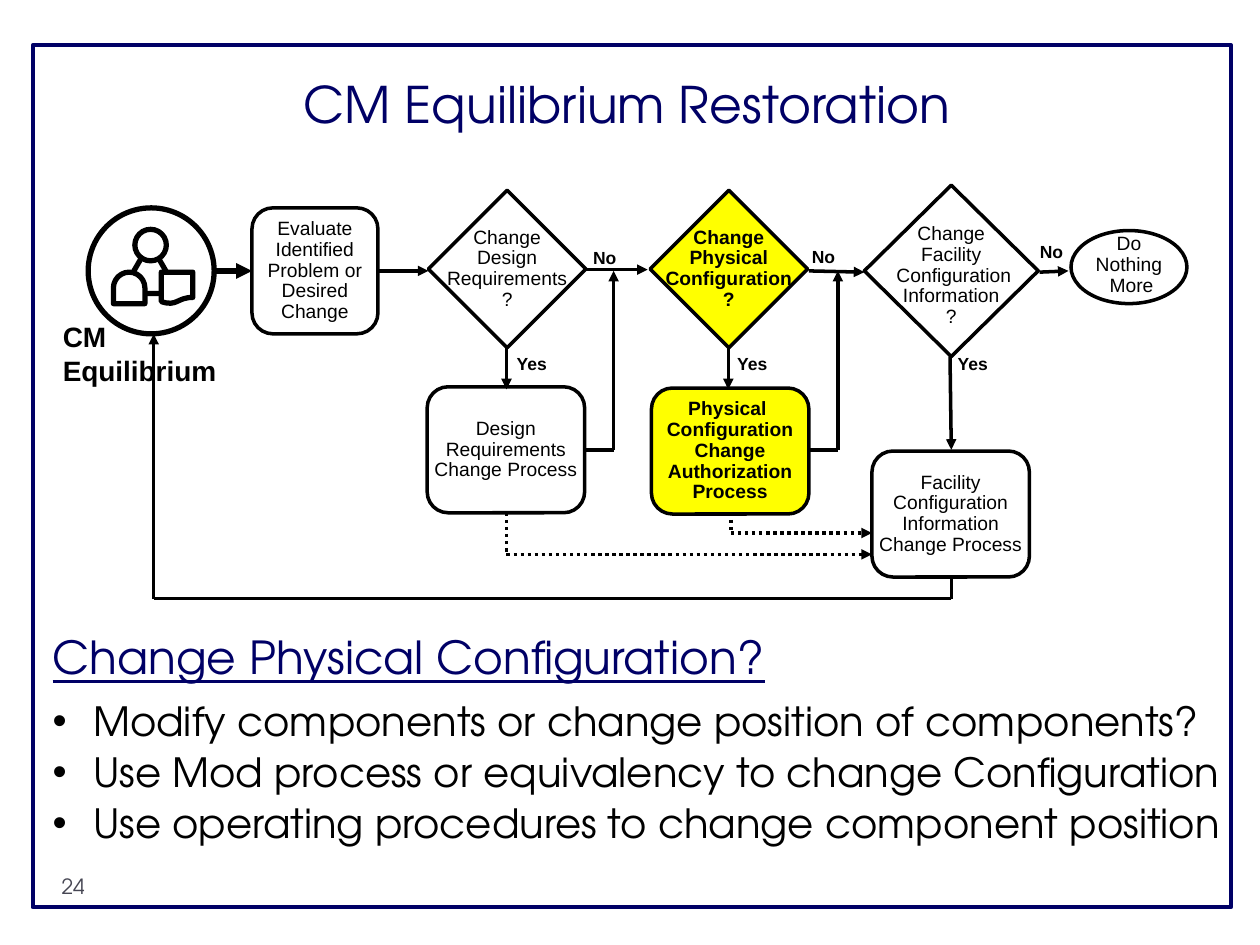
from copy import deepcopy
from dataclasses import dataclass

from lxml.etree import SubElement
from pptx import Presentation
from pptx.dml.color import RGBColor
from pptx.enum.dml import MSO_LINE
from pptx.enum.shapes import MSO_CONNECTOR, MSO_SHAPE
from pptx.enum.text import MSO_ANCHOR, PP_ALIGN
from pptx.oxml.ns import qn
from pptx.util import Inches, Pt


@dataclass(frozen=True)
class Theme:
    head: str = "TeX Gyre Adventor"
    body: str = "Arial"
    navy: str = "000066"
    black: str = "000000"
    white: str = "FFFFFF"
    yellow: str = "FFFF00"
    grey: str = "464653"
    title: float = 28.8
    topic: float = 26
    point: float = 23
    state: float = 16
    node: float = 11
    mark: float = 10
    page: float = 12
    thin: float = 2
    frame: float = 2.5
    thick: float = 3


T = Theme()


def assign(item, values):
    for name, value in values.items():
        setattr(item, name, value)


def style(para, size, face=T.body, color=T.black, **font):
    """Format each run of a paragraph, and its line breaks alike."""
    for run in para.runs:
        assign(run.font, dict(size=Pt(size), name=face, **font))
        run.font.color.rgb = RGBColor.from_string(color)
    for gap in para._p.findall(qn("a:br")):
        gap.append(deepcopy(para.runs[0]._r.rPr))


def stroke(line, color, width):
    line.color.rgb = RGBColor.from_string(color)
    line.width = Pt(width)


def write(slide, box, text, size, align=PP_ALIGN.LEFT, anchor=MSO_ANCHOR.TOP, **font):
    frame = slide.shapes.add_textbox(*map(Inches, box)).text_frame
    assign(frame, dict(word_wrap=True, vertical_anchor=anchor, text=text))
    for para in frame.paragraphs:
        para.alignment = align
        style(para, size, **font)
    return frame


def draw(slide, kind, box, fill=None, width=T.thin, color=T.black, turn=0):
    shape = slide.shapes.add_shape(kind, *map(Inches, box))
    shape.shadow.inherit = False
    shape.rotation = turn
    stroke(shape.line, color, width)
    if fill:
        shape.fill.solid()
        shape.fill.fore_color.rgb = RGBColor.from_string(fill)
    else:
        shape.fill.background()
    return shape


def node(slide, kind, box, text, fill=T.white, bold=False, inset=(0.1, 0.05, 0.1, 0.05)):
    frame = draw(slide, kind, box, fill).text_frame
    sides = ("margin_left", "margin_top", "margin_right", "margin_bottom")
    assign(frame, dict(zip(sides, map(Inches, inset))))
    assign(frame, dict(word_wrap=False, vertical_anchor=MSO_ANCHOR.MIDDLE, text=text))
    for para in frame.paragraphs:
        assign(para, dict(alignment=PP_ALIGN.CENTER, line_spacing=0.9))
        style(para, T.node, bold=bold)


def route(slide, *stops, width=T.thin, dash=None):
    """Join the stops by straight lines, with an arrowhead at the last one."""
    for start, end in zip(stops, stops[1:]):
        ends = map(Inches, (*start, *end))
        wire = slide.shapes.add_connector(MSO_CONNECTOR.STRAIGHT, *ends)
        stroke(wire.line, T.black, width)
        if dash:
            wire.line.dash_style = dash
        if end == stops[-1]:
            SubElement(wire.line._get_or_add_ln(), qn("a:tailEnd"), type="triangle")
        SubElement(wire._element.spPr, qn("a:effectLst"))


def person(slide):
    """Draw the round sign of the equilibrium state."""
    parts = [
        (MSO_SHAPE.OVAL, (0.7, 1.65, 1, 1), T.white, 0),
        (MSO_SHAPE.ISOSCELES_TRIANGLE, (0.96, 1.93, 0.46, 0.4), None, 0),
        (MSO_SHAPE.OVAL, (1.07, 1.82, 0.25, 0.25), T.white, 0),
        (MSO_SHAPE.FLOWCHART_DOCUMENT, (1.28, 2.16, 0.25, 0.25), T.white, 0),
        (MSO_SHAPE.FLOWCHART_DELAY, (0.9, 2.16, 0.25, 0.25), T.white, 270),
    ]
    for kind, box, fill, turn in parts:
        draw(slide, kind, box, fill, T.thick, turn=turn)
    write(slide, (0.4, 2.49, 1.45, 0.64), "CM Equilibrium", T.state, bold=True)


def nodes(slide):
    card, gate, oval = MSO_SHAPE.ROUNDED_RECTANGLE, MSO_SHAPE.DIAMOND, MSO_SHAPE.OVAL
    hot = dict(fill=T.yellow, bold=True)
    node(slide, card, (2, 1.65, 1, 1),
         "Evaluate\vIdentified\vProblem or\vDesired\vChange")
    node(slide, gate, (3.4, 1.51, 1.25, 1.25), "Change\vDesign\nRequirements\v?")
    node(slide, gate, (5.16, 1.51, 1.25, 1.25),
         "Change\vPhysical\vConfiguration\v?", **hot)
    node(slide, gate, (6.86, 1.47, 1.38, 1.36),
         "Change\vFacility\n Configuration\vInformation\v?", None, inset=(0, 0.08, 0, 0))
    node(slide, oval, (8.5, 1.83, 0.92, 0.58), "Do\vNothing\v More", None,
         inset=(0.1, 0.02, 0.1, 0.05))
    node(slide, card, (3.39, 3.07, 1.25, 1), "Design\nRequirements\vChange Process")
    node(slide, card, (5.17, 3.08, 1.25, 1),
         "Physical \vConfiguration\vChange\vAuthorization\vProcess", **hot)
    node(slide, card, (6.92, 3.58, 1.25, 1),
         "Facility\nConfiguration\vInformation\vChange Process", None)


def routes(slide):
    route(slide, (1.7, 2.15), (2, 2.15), width=T.thick)
    route(slide, (3, 2.15), (3.4, 2.15))
    route(slide, (4.64, 2.14), (5.14, 2.14))
    route(slide, (6.42, 2.15), (6.86, 2.16))
    route(slide, (8.25, 2.16), (8.48, 2.15))
    for x in (4.02, 5.78):
        route(slide, (x, 2.76), (x, 3.09))
    route(slide, (7.54, 2.83), (7.55, 3.57))
    for x, turn in ((4.64, 4.87), (6.41, 6.65)):
        route(slide, (x, 3.57), (turn, 3.57), (turn, 2.15))
    for x, y in ((4.02, 4.4), (5.8, 4.23)):
        route(slide, (x, 4.07), (x, y), (6.92, y), dash=MSO_LINE.ROUND_DOT)
    route(slide, (7.55, 4.57), (7.55, 4.75), (1.22, 4.75), (1.22, 2.65))


def marks(slide):
    spots = [("No", 4.5, 1.91, 0.6), ("No", 6.32, 1.9, 0.43), ("No", 8.11, 1.86, 0.47)]
    spots += [("Yes", x, 2.75, 0.6) for x in (3.92, 5.67, 7.42)]
    for text, x, y, wide in spots:
        write(slide, (x, y, wide, 0.27), text, T.mark, PP_ALIGN.CENTER, bold=True)


def points(slide):
    """Write the topic and its bullet points."""
    lines = [
        "Change Physical Configuration?",
        "Modify components or change position of components?",
        "Use Mod process or equivalency to change Configuration",
        "Use operating procedures to change component position",
    ]
    frame = write(slide, (0.32, 4.99, 9.68, 2.07), "\n".join(lines), T.point, face=T.head)
    topic, *rest = frame.paragraphs
    topic.line_spacing = 0.9
    style(topic, T.topic, T.head, T.navy, underline=True)
    gaps = [(0.9, 10), (Pt(23), 6), (Pt(23), 6)]
    for para, (pitch, above) in zip(rest, gaps):
        assign(para, dict(line_spacing=pitch, space_before=Pt(above)))
        props = para._p.get_or_add_pPr()
        props.set("marL", str(Inches(0.32)))
        props.set("indent", str(Inches(-0.32)))
        SubElement(props, qn("a:buFont"), typeface=T.body)
        SubElement(props, qn("a:buChar"), char="•")


def main():
    deck = Presentation()
    assign(deck, dict(slide_width=Inches(10), slide_height=Inches(7.5)))
    slide = deck.slides.add_slide(deck.slide_layouts[6])
    write(slide, (2.31, 0.53, 6.33, 0.58), "CM Equilibrium Restoration", T.title,
          anchor=MSO_ANCHOR.BOTTOM, face=T.head, color=T.navy)
    points(slide)
    person(slide)
    nodes(slide)
    routes(slide)
    marks(slide)
    draw(slide, MSO_SHAPE.RECTANGLE, (0.26, 0.36, 9.51, 6.84), None, T.frame, T.navy)
    write(slide, (0.39, 6.88, 0.46, 0.4), "24", T.page, face=T.head, color=T.grey)
    deck.save("out.pptx")


if __name__ == "__main__":
    main()
